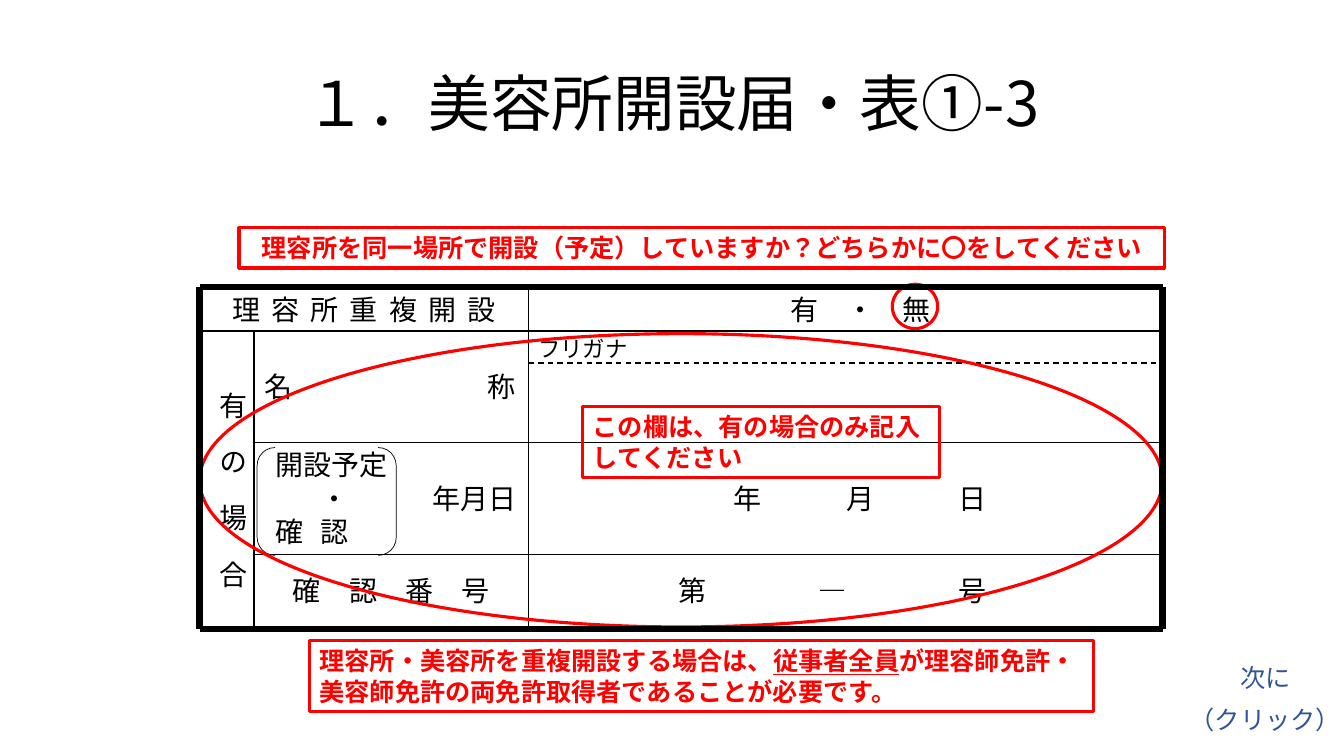
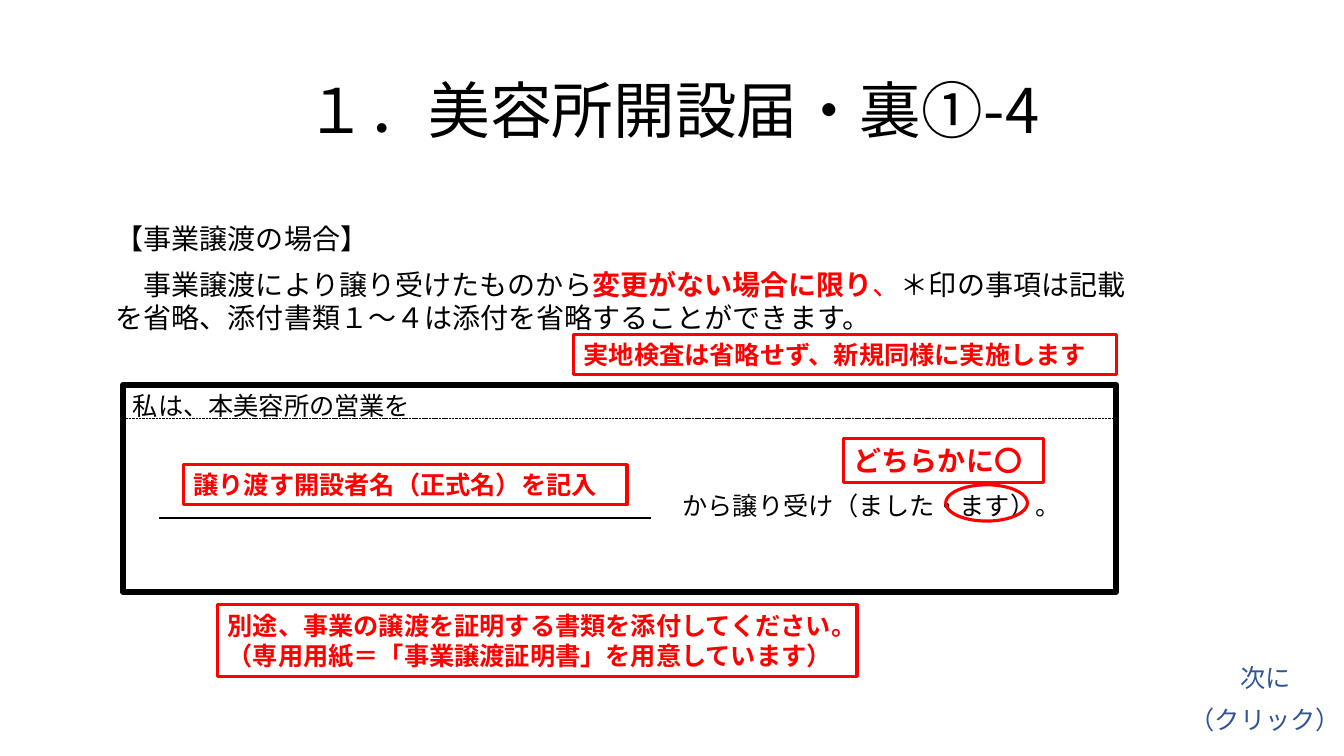
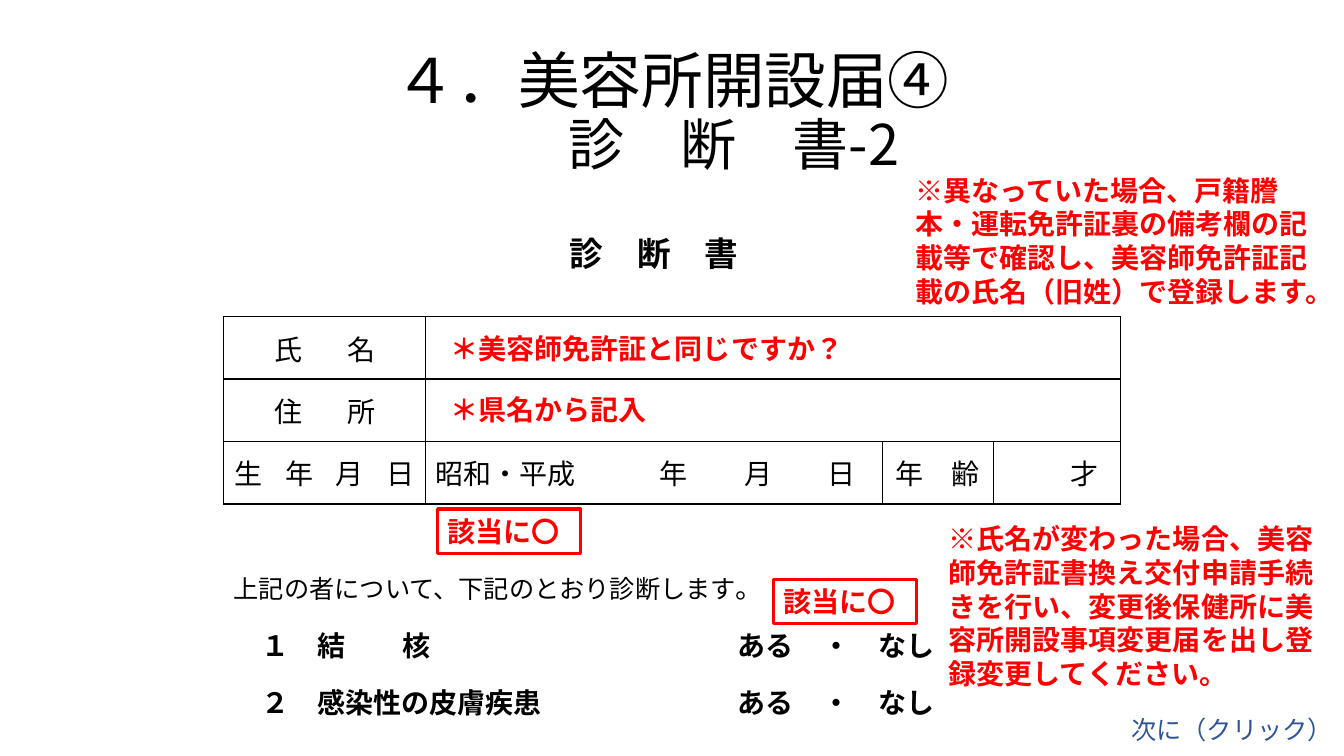
from lxml import etree
from pptx import Presentation
from pptx.dml.color import RGBColor
from pptx.enum.dml import MSO_LINE
from pptx.enum.lang import MSO_LANGUAGE_ID as Language
from pptx.enum.shapes import MSO_CONNECTOR, MSO_SHAPE
from pptx.enum.text import MSO_ANCHOR, MSO_AUTO_SIZE, PP_ALIGN
from pptx.oxml.ns import qn
from pptx.util import Inches, Pt

BLACK = RGBColor(0x00, 0x00, 0x00)
RED = RGBColor(0xFF, 0x00, 0x00)
BLUE = RGBColor(0x2F, 0x55, 0x97)
JAPANESE_FONT = "Noto Sans CJK JP"
LATIN_FONT = "Arial"
LEFT, CENTER = PP_ALIGN.LEFT, PP_ALIGN.CENTER
TOP, MIDDLE = MSO_ANCHOR.TOP, MSO_ANCHOR.MIDDLE


# Text
def format_run(run, size, color=BLACK, bold=False, font=JAPANESE_FONT,
               underline=False, gap=0):
    run.font.size = Pt(size)
    run.font.bold = bold
    run.font.underline = underline
    run.font.color.rgb = color
    run.font.name = font
    run.font.language_id = Language.JAPANESE
    properties = run.font._element
    etree.SubElement(properties, qn("a:ea")).set("typeface", font)
    if gap:
        properties.set("spc", str(gap * 100))


def set_tabs(paragraph, positions):
    tab_list = etree.SubElement(paragraph._p.get_or_add_pPr(), qn("a:tabLst"))
    for position in positions:
        tab = etree.SubElement(tab_list, qn("a:tab"))
        tab.set("pos", str(Inches(position)))
        tab.set("algn", "l")


def spread(text, gap):
    """Runs that hold the letters apart, without a gap after the last one."""
    return [(text[:-1], {"gap": gap}), (text[-1], {})]


def write(text_frame, paragraphs, align=LEFT, anchor=MIDDLE, tabs=(),
          before=0, line_spacing=None, **style):
    """Each paragraph is a string or a list of (text, style changes)."""
    text_frame.word_wrap = True
    text_frame.vertical_anchor = anchor
    for index, content in enumerate(paragraphs):
        paragraph = text_frame.paragraphs[0] if index == 0 else text_frame.add_paragraph()
        paragraph.alignment = align
        paragraph.space_before = Pt(before)
        if line_spacing:
            paragraph.line_spacing = line_spacing
        if tabs:
            set_tabs(paragraph, tabs)
        runs = [(content, {})] if isinstance(content, str) else content
        for text, changes in runs:
            run = paragraph.add_run()
            run.text = text
            format_run(run, **{**style, **changes})


# Parts
def add_outline(slide, box, color=BLACK, width=0.75, kind=MSO_SHAPE.RECTANGLE):
    shape = slide.shapes.add_shape(kind, *map(Inches, box))
    shape.shadow.inherit = False
    shape.fill.background()
    shape.line.color.rgb = color
    shape.line.width = Pt(width)
    return shape


def add_cell(slide, box, paragraphs, size=20, line=0.75, **options):
    shape = add_outline(slide, box, width=line)
    write(shape.text_frame, paragraphs, size=size, **options)
    return shape


def add_callout(slide, box, content, size=18, **options):
    shape = add_outline(slide, box, RED, 2.25)
    write(shape.text_frame, [content], size=size, color=RED, bold=True, **options)


def add_ring(slide, box):
    add_outline(slide, box, RED, 2.25, MSO_SHAPE.OVAL)


def add_text(slide, box, paragraphs, size=20, **options):
    text_box = slide.shapes.add_textbox(*map(Inches, box))
    write(text_box.text_frame, paragraphs, size=size, **options)


def add_line(slide, start, end, width, dash=None):
    line = slide.shapes.add_connector(
        MSO_CONNECTOR.STRAIGHT, *map(Inches, (*start, *end)))
    line.line.color.rgb = BLACK
    line.line.width = Pt(width)
    if dash:
        line.line.dash_style = dash
    etree.SubElement(line._element.spPr, qn("a:effectLst"))


def add_titled_slide(presentation, box, paragraphs):
    slide = presentation.slides.add_slide(presentation.slide_layouts[5])
    title = slide.shapes.title
    title.left, title.top, title.width, title.height = map(Inches, box)
    title.text_frame.auto_size = MSO_AUTO_SIZE.NONE
    write(title.text_frame, paragraphs, size=44, align=CENTER, line_spacing=0.9)
    return slide


def add_next_prompt(slide, box, lines):
    add_text(slide, box, lines, size=18, color=BLUE, align=CENTER, anchor=TOP,
             before=10, line_spacing=0.9)


# Slide 1: form for shops that share their place
def add_overlap_form(slide, left, top, width, height):
    right, bottom = left + width, top + height
    name, answer = left + 0.54, left + 3.26
    answer_width = right - answer
    label_width = answer - name
    name_top, date_top, number_top = top + 0.43, top + 1.54, top + 2.65
    row, tall, low = 0.44, 1.11, 0.71

    add_cell(slide, (answer, top, answer_width, row), ["\t有　・　無"],
             line=0.5, tabs=[2.5])
    side = add_cell(slide, (left, name_top, 0.54, 2.95), ["有　の　場　合"], anchor=TOP)
    side.text_frame._txBody.bodyPr.set("vert", "eaVert")
    side.text_frame.margin_top = Inches(0.61)
    side.text_frame.margin_right = Inches(0.05)
    add_cell(slide, (left, top, answer - left, row), [spread("理容所重複開設", 8)],
             align=CENTER)
    add_cell(slide, (name, name_top, label_width, tall), ["名\t称"], tabs=[2.22])
    add_cell(slide, (answer, name_top, answer_width, tall), ["フリガナ"],
             size=16, line=0.25, anchor=TOP)
    add_line(slide, (answer, top + 0.75), (right, top + 0.75), 1, MSO_LINE.DASH)

    # Date row
    add_cell(slide, (name, date_top, label_width, tall),
             ["\t開設予定", "\t\t・\t\t年月日", "\t確\t認"],
             anchor=TOP, tabs=[0.11, 0.56, 0.94, 1.67])
    add_outline(slide, (name + 0.03, date_top + 0.05, 1.38, 1.07), width=0.5,
                kind=MSO_SHAPE.DOUBLE_BRACKET)
    add_cell(slide, (answer, date_top, answer_width, tall), ["\t年\t月\t日"],
             tabs=[1.94, 3.06, 4.17])

    # Number row
    add_cell(slide, (answer, number_top, answer_width, low), ["\t第\t―\t号"],
             line=0.5, tabs=[1.39, 2.78, 4.17])
    add_cell(slide, (name, number_top, label_width, low), ["確　認　番　号"],
             line=0.5, align=CENTER)

    # Marks and heavy frame
    add_ring(slide, (left, top + 0.46, width, 2.91))
    add_ring(slide, (left + 6.87, top - 0.03, 0.45, 0.44))
    add_callout(slide, (left + 3.8, top + 1.18, 3.54, 0.71),
                "この欄は、有の場合のみ記入してください")
    corners = [(left, top), (right, top), (right, bottom), (left, bottom)]
    for start, end in zip(corners, corners[1:] + corners[:1]):
        add_line(slide, start, end, 4.5)


def build_overlap_slide(presentation):
    slide = add_titled_slide(presentation, (0.92, 0.33, 11.5, 1.45),
                             ["１．美容所開設届・表①-3"])
    add_callout(slide, (2.37, 2.26, 9.18, 0.4),
                "理容所を同一場所で開設（予定）していますか？どちらかに〇をしてください",
                align=CENTER)
    add_overlap_form(slide, 1.98, 2.85, 9.55, 3.39)
    add_callout(slide, (3.07, 6.35, 7.78, 0.71), [
        ("理容所・美容所を重複開設する場合は、", {}),
        ("従事者全員", {"underline": True}),
        ("が理容師免許・美容師免許の両免許取得者であることが必要です。", {})])
    add_next_prompt(slide, (11.55, 6.56, 2, 0.87), ["次に", "（クリック）"])


# Slide 2: transfer of the business
def add_transfer_form(slide, left, top, width, height):
    add_outline(slide, (left, top, width, height), width=4.5)
    add_text(slide, (left, top, 3.17, 0.4), ["私は、本美容所の営業を"], size=18)
    add_line(slide, (left, top + 0.33), (left + width, top + 0.33), 0.25,
             MSO_LINE.SQUARE_DOT)
    add_line(slide, (left + 0.36, top + 1.32), (left + 5.24, top + 1.32), 1)
    add_text(slide, (left + 5.45, top + 0.99, 4, 0.4),
             ["から譲り受け（ました・ます）。"], size=18)
    add_callout(slide, (left + 0.6, top + 0.79, 4.4, 0.4),
                "譲り渡す開設者名（正式名）を記入")
    add_callout(slide, (left + 7.15, top + 0.53, 1.98, 0.44), "どちらかに〇", size=20)
    add_ring(slide, (left + 8.16, top + 0.99, 0.81, 0.36))


def build_transfer_slide(presentation):
    slide = add_titled_slide(presentation, (0.92, 0.4, 11.5, 1.45),
                             ["１．美容所開設届・裏①-4"])
    add_text(slide, (1.05, 2.14, 2.97, 0.44), ["【事業譲渡の場合】"])
    add_text(slide, (1.05, 2.6, 10.54, 0.77), [
        [("　事業譲渡により譲り受けたものから", {}),
         ("変更がない場合に限り", {"color": RED, "bold": True}),
         ("、", {"color": RED}),
         ("＊印の事項は記載", {})],
        "を省略、添付書類１～４は添付を省略することができます。"])
    add_transfer_form(slide, 1.22, 3.82, 9.85, 2.05)
    add_callout(slide, (2.16, 6, 6.34, 0.71),
                "別途、事業の譲渡を証明する書類を添付してください。"
                "（専用用紙＝「事業譲渡証明書」を用意しています）")
    add_callout(slide, (5.69, 3.32, 5.38, 0.4),
                "実地検査は省略せず、新規同様に実施します")
    add_next_prompt(slide, (11.55, 6.56, 2, 0.87), ["次に", "（クリック）"])


# Slide 3: medical certificate
def set_borders(cell):
    properties = cell._tc.get_or_add_tcPr()
    for index, side in enumerate(("a:lnL", "a:lnR", "a:lnT", "a:lnB")):
        border = etree.Element(qn(side), w=str(Pt(1)))
        fill = etree.SubElement(border, qn("a:solidFill"))
        etree.SubElement(fill, qn("a:srgbClr")).set("val", str(BLACK))
        properties.insert(index, border)


def add_person_table(slide, left, top):
    columns, row_height = (2, 4.53, 1.1, 1.26), 0.62
    table = slide.shapes.add_table(
        3, len(columns),
        *map(Inches, (left, top, sum(columns), 3 * row_height))).table
    table.first_row = table.horz_banding = False
    for column, width in zip(table.columns, columns):
        column.width = Inches(width)
    for row in table.rows:
        row.height = Inches(row_height)
        for cell in row.cells:
            cell.fill.background()
            set_borders(cell)
    for row in (0, 1):
        table.cell(row, 1).merge(table.cell(row, 3))

    entries = [
        (0, 0, spread("氏名", 32), CENTER, ()),
        (1, 0, spread("住所", 32), CENTER, ()),
        (2, 0, spread("生年月日", 16), CENTER, ()),
        (2, 1, "昭和・平成\t年\t月\t日", LEFT, (2.22, 3.06, 3.89)),
        (2, 2, "年　齢", CENTER, ()),
        (2, 3, "\t才", LEFT, (0.67,)),
    ]
    for row, column, content, align, tabs in entries:
        cell = table.cell(row, column)
        cell.vertical_anchor = MIDDLE
        paragraph_frame = cell.text_frame
        write(paragraph_frame, [content], size=20, align=align, tabs=tabs)

    # Hints beside the table
    for offset, width, hint in ((0.1, 4.27, "美容師免許証と同じですか？"),
                                (0.7, 2.3, "県名から記入")):
        add_text(slide, (left + 2.15, top + offset, width, 0.44),
                 [[("＊", {"font": JAPANESE_FONT}), (hint, {})]],
                 color=RED, bold=True, font=LATIN_FONT)


def add_diagnosis(slide, box):
    add_text(slide, box, [
        [("上記の者について、下記のとおり診断します", {"size": 18, "bold": False}),
         ("。", {"bold": False})],
        "\t１\t結\t核\tある　・　なし",
        "\t２\t感染性の皮膚疾患\tある　・　なし"],
        bold=True, before=17, tabs=[0.28, 0.83, 1.67, 5])


def build_certificate_slide(presentation):
    slide = add_titled_slide(presentation, (0.92, 0.2, 11.5, 1.86), [
        "４．美容所開設届④", [("診　断　書-2", {"size": 40})]])
    subtitle = slide.shapes.title.text_frame.paragraphs[1]
    subtitle._p.get_or_add_pPr().set("marL", str(Inches(1.22)))
    add_person_table(slide, 2.22, 3.14)
    add_diagnosis(slide, (2.22, 5.61, 8.89, 1.58))
    add_text(slide, (4.9, 2.26, 3.17, 0.5), ["診　断　書"], size=24, bold=True,
             align=CENTER)
    notices = [
        ((9.31, 5.12, 4.05, 1.78),
         "※氏名が変わった場合、美容師免許証書換え交付申請手続きを行い、"
         "変更後保健所に美容所開設事項変更届を出し登録変更してください。"),
        ((8.98, 1.66, 4.27, 1.45),
         "※異なっていた場合、戸籍謄本・運転免許証裏の備考欄の記載等で確認し、"
         "美容師免許証記載の氏名（旧姓）で登録します。"),
    ]
    for box, notice in notices:
        add_text(slide, box, [notice], color=RED, bold=True, font=LATIN_FONT)
    for left, top in ((4.34, 5.05), (7.67, 5.75)):
        add_callout(slide, (left, top, 1.42, 0.44), "該当に〇", size=20, font=LATIN_FONT)
    add_next_prompt(slide, (11, 7.07, 2.44, 0.49), ["次に（クリック）"])


def main():
    presentation = Presentation()
    presentation.slide_width = Inches(13.33)
    presentation.slide_height = Inches(7.5)
    build_overlap_slide(presentation)
    build_transfer_slide(presentation)
    build_certificate_slide(presentation)
    presentation.save("out.pptx")


if __name__ == "__main__":
    main()
